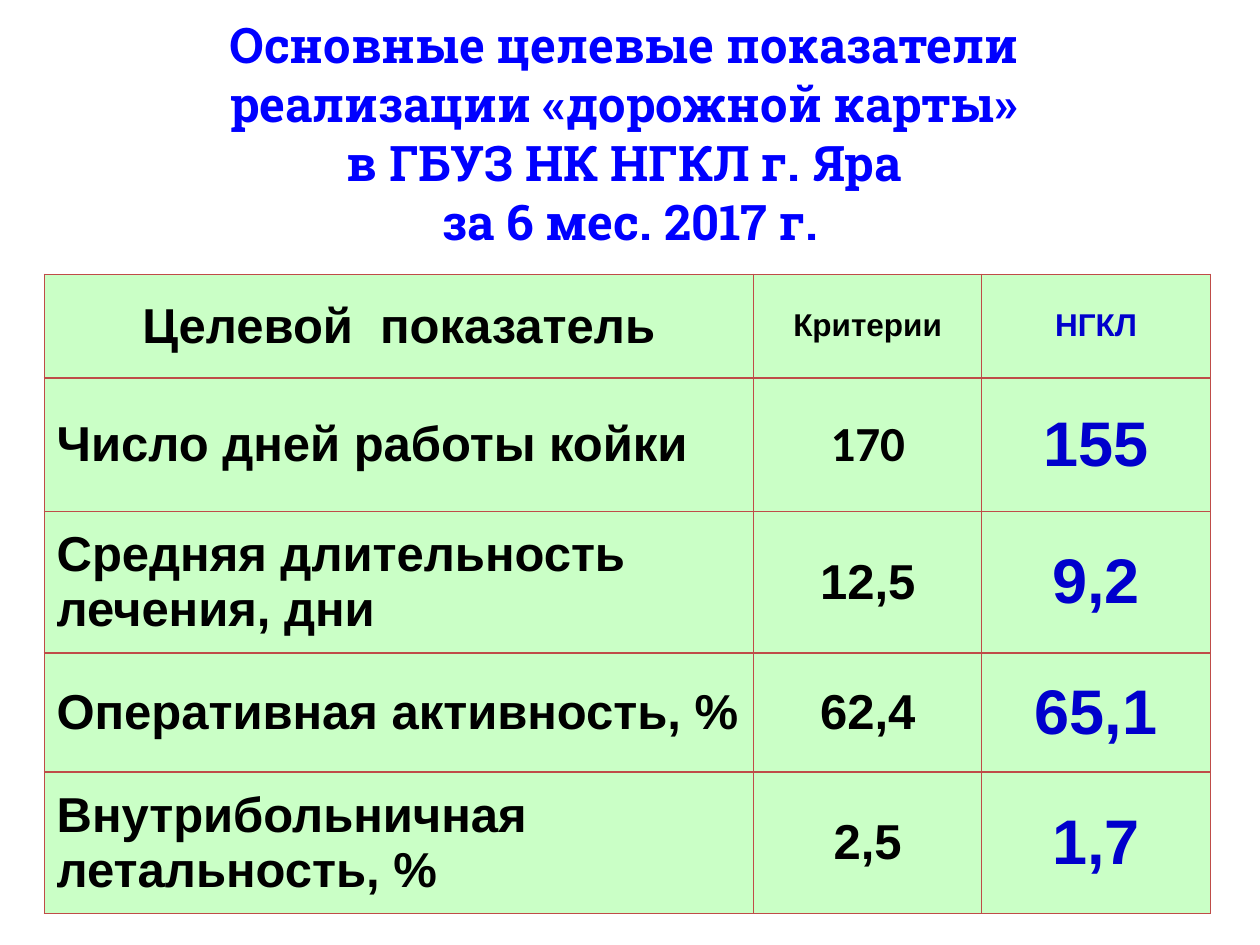
from lxml import etree
from pptx import Presentation
from pptx.dml.color import RGBColor
from pptx.enum.text import MSO_ANCHOR, MSO_AUTO_SIZE, PP_ALIGN
from pptx.oxml.ns import qn
from pptx.util import Inches, Pt

CENTER, LEFT = PP_ALIGN.CENTER, PP_ALIGN.LEFT
MIDDLE = MSO_ANCHOR.MIDDLE
NO_FIT = MSO_AUTO_SIZE.NONE
TITLE_ONLY = 5
COLORS = {"title": "0000FF", "text": "000000", "result": "0000CC",
          "cell": "CAFFC6", "border": "BF4C48"}
TITLE = ("Основные целевые показатели \vреализации «дорожной карты» \v"
         "в ГБУЗ НК НГКЛ г. Яра \vза 6 мес. 2017 г.")
ROWS = [
    ("Целевой  показатель", "Критерии", "НГКЛ"),
    ("Число дней работы койки", "170", "155"),
    ("Средняя длительность лечения, дни", "12,5", "9,2"),
    ("Оперативная активность, %", "62,4", "65,1"),
    ("Внутрибольничная летальность, %", "2,5", "1,7"),
]
COLUMN_SHARES = (0.563, 0.1813, 0.1813)
ROW_SHARES = (0.11, 0.141, 0.15, 0.126, 0.15)
HEADER_SIZES, BODY_SIZES = (28, 18, 18), (28, 28, 36)


class SlideBuilder:
    """Builds slide elements in one style, with lengths as shares of the slide."""

    def __init__(self, deck):
        self.width, self.height = deck.slide_width, deck.slide_height
        self.slide = deck.slides.add_slide(deck.slide_layouts[TITLE_ONLY])

    def across(self, share):
        return round(self.width * share)

    def down(self, share):
        return round(self.height * share)

    def style(self, paragraph, size, color, align, font="Arial"):
        paragraph.alignment = align
        paragraph.font.name = font
        paragraph.font.size = Pt(size)
        paragraph.font.bold = True
        paragraph.font.color.rgb = RGBColor.from_string(COLORS[color])

    def title(self, text, left, top, width, height):
        box = self.slide.shapes.title
        box.left, box.top = self.across(left), self.down(top)
        box.width, box.height = self.across(width), self.down(height)
        frame = box.text_frame
        frame.text = text
        frame.auto_size = NO_FIT
        frame.vertical_anchor = MIDDLE
        self.style(frame.paragraphs[0], 28, "title", CENTER, "Roboto Slab")

    def borders(self, cell):
        properties = cell._tc.get_or_add_tcPr()
        for position, side in enumerate(("a:lnL", "a:lnR", "a:lnT", "a:lnB")):
            line = etree.Element(qn(side), w=str(Pt(0.75)))
            fill = etree.SubElement(line, qn("a:solidFill"))
            etree.SubElement(fill, qn("a:srgbClr"), val=COLORS["border"])
            properties.insert(position, line)

    def cell(self, cell, text, size, color, align, font):
        cell.text = text
        cell.vertical_anchor = MIDDLE
        cell.fill.solid()
        cell.fill.fore_color.rgb = RGBColor.from_string(COLORS["cell"])
        self.style(cell.text_frame.paragraphs[0], size, color, align, font)
        self.borders(cell)

    def table(self, rows, left, top):
        table = self.slide.shapes.add_table(
            len(rows), len(COLUMN_SHARES), self.across(left), self.down(top),
            self.across(sum(COLUMN_SHARES)), self.down(sum(ROW_SHARES))).table
        for column, share in zip(table.columns, COLUMN_SHARES):
            column.width = self.across(share)
        for row, share in zip(table.rows, ROW_SHARES):
            row.height = self.down(share)
        for r, texts in enumerate(rows):
            sizes = BODY_SIZES if r else HEADER_SIZES
            for c, text in enumerate(texts):
                color = "result" if c == 2 else "text"
                align = LEFT if r and c == 0 else CENTER
                font = "Calibri" if (r, c) == (1, 1) else "Arial"
                self.cell(table.cell(r, c), text, sizes[c], color, align, font)


def main():
    deck = Presentation()
    deck.slide_width, deck.slide_height = Inches(10), Inches(7.5)
    builder = SlideBuilder(deck)
    builder.title(TITLE, 0, 0.1, 1, 0.08)
    builder.table(ROWS, 0.035, 0.29)
    deck.save("out.pptx")


if __name__ == "__main__":
    main()
